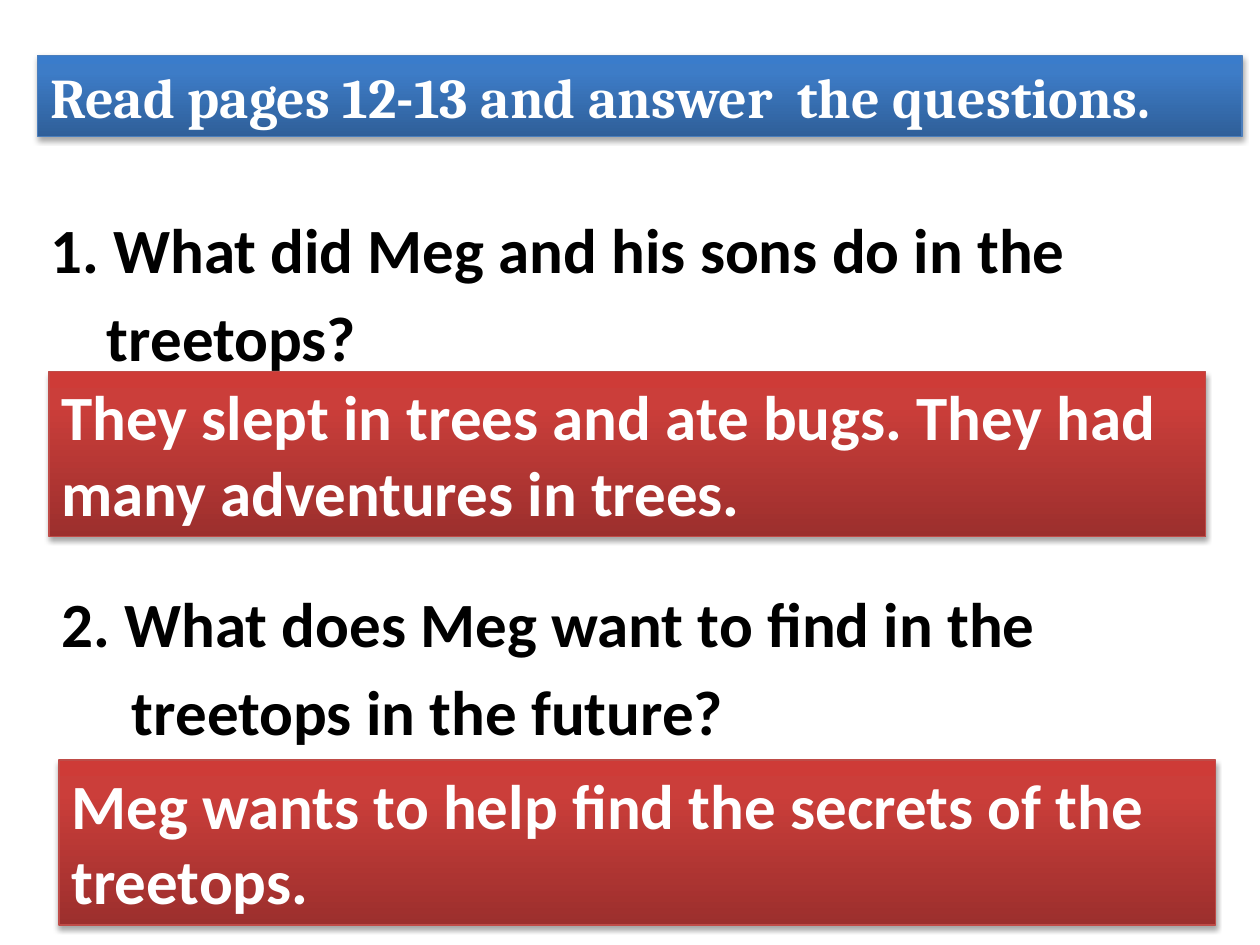
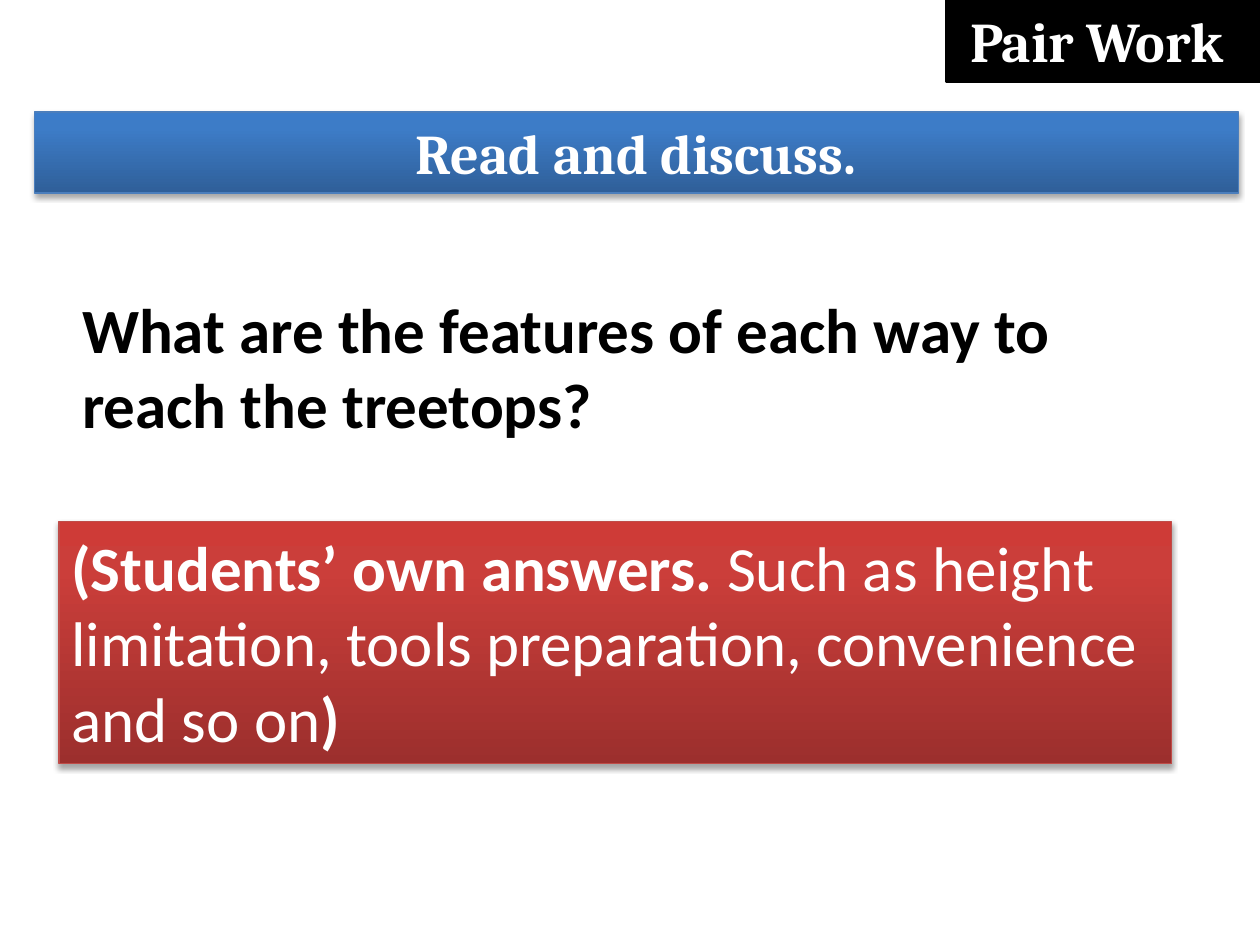
from lxml.etree import SubElement
from pptx import Presentation
from pptx.dml.color import RGBColor
from pptx.enum.shapes import MSO_SHAPE
from pptx.enum.text import MSO_ANCHOR, MSO_AUTO_SIZE, PP_ALIGN
from pptx.oxml.ns import qn
from pptx.util import Cm, Pt

# Shared look: gradient stops run from the bottom edge to the top
BLACK, WHITE = "000000", "FFFFFF"
BLUE = {"stops": [(0, "2F5F99"), (80, "3D7CC7"), (100, "3A7CCB")], "edge": "4B7EBC"}
RED = {"stops": [(0, "9C2F2D"), (80, "CB3E3A"), (100, "CE3B37")], "edge": "BF4C48"}
HEADING = {"font": "Cambria", "size": 32, "color": WHITE}
BAND_WIDTH, BAND_HEIGHT = 24.28, 1.63
ANSWER_WIDTH = 23.32


def rgb(color):
    return RGBColor.from_string(color)


def add(parent, tag, **attributes):
    """Append a child element and return it."""
    return SubElement(parent, qn(tag), {k: str(v) for k, v in attributes.items()})


def place(s, left, top, width, height):
    s.left, s.top, s.width, s.height = Cm(left), Cm(top), Cm(width), Cm(height)


def write(s, *paragraphs, font="Calibri", size=36, color=BLACK, align=PP_ALIGN.LEFT,
          anchor=MSO_ANCHOR.TOP, before=0, indents=()):
    """Each paragraph is a list of (text, bold) runs, or a string set in bold."""
    tf = s.text_frame
    tf.word_wrap = True
    tf.auto_size = MSO_AUTO_SIZE.NONE
    tf.vertical_anchor = anchor
    for i, runs in enumerate(paragraphs):
        p = tf.paragraphs[0] if i == 0 else tf.add_paragraph()
        p.alignment = align
        p.space_before = Pt(before)
        pPr = p._p.get_or_add_pPr()
        pPr.set("marL", str(Cm(indents[i] if indents else 0)))
        pPr.set("indent", "0")
        add(pPr, "a:buNone")
        for text, bold in [(runs, True)] if isinstance(runs, str) else runs:
            r = p.add_run()
            r.text = text
            r.font.name, r.font.size, r.font.bold = font, Pt(size), bold
            r.font.color.rgb = rgb(color)


def style_band(s, theme):
    """Vertical gradient, thin edge and a soft shadow below."""
    spPr = s._element.spPr
    gradient = add(spPr, "a:gradFill", rotWithShape=1)
    stops = add(gradient, "a:gsLst")
    for position, color in theme["stops"]:
        add(add(stops, "a:gs", pos=position * 1000), "a:srgbClr", val=color)
    add(gradient, "a:lin", ang=270 * 60000, scaled=0)
    s.line.color.rgb = rgb(theme["edge"])
    s.line.width = Pt(0.75)
    shadow = add(add(spPr, "a:effectLst"), "a:outerShdw", blurRad=Pt(3.1),
                 dist=Pt(1.8), dir=90 * 60000, rotWithShape=0)
    add(add(shadow, "a:srgbClr", val=BLACK), "a:alpha", val=35000)


def add_heading(slide, text, left, top, align=PP_ALIGN.LEFT):
    s = slide.shapes.title
    place(s, left, top, BAND_WIDTH, BAND_HEIGHT)
    style_band(s, BLUE)
    write(s, text, align=align, anchor=MSO_ANCHOR.MIDDLE, **HEADING)


def add_question(slide, *lines, box, indents=(), in_body=True):
    s = slide.placeholders[1] if in_body else slide.shapes.add_textbox(0, 0, 0, 0)
    place(s, *box)
    write(s, *lines, before=7.2, indents=indents)


def add_box(slide, *box):
    return slide.shapes.add_shape(MSO_SHAPE.RECTANGLE, *map(Cm, box))


def add_answer(slide, runs, left, top, width=ANSWER_WIDTH, height=3.33):
    s = add_box(slide, left, top, width, height)
    style_band(s, RED)
    write(s, runs, color=WHITE)


def add_corner_tag(slide, text):
    s = add_box(slide, 19.08, 0, 6.32, BAND_HEIGHT)
    s.shadow.inherit = False
    s.fill.solid()
    s.fill.fore_color.rgb = rgb(BLACK)
    s.line.color.rgb = rgb(BLACK)
    s.line.width = Pt(2)
    write(s, text, align=PP_ALIGN.CENTER, **HEADING)


def main():
    prs = Presentation()
    prs.slide_width, prs.slide_height = Cm(25.4), Cm(19.05)
    layout = prs.slide_layouts[1]

    # Reading questions with their answers
    slide = prs.slides.add_slide(layout)
    add_heading(slide, "Read pages 12-13 and answer  the questions.", 0.76, 1.12)
    add_question(slide, "1. What did Meg and his sons do in the", "treetops?",
                 box=(0.76, 4.11, 22.86, 3.61), indents=(0, 1.14))
    add_question(slide, "2. What does Meg want to find in the", "treetops in the future?",
                 box=(0.99, 11.66, 21.41, 3.63), indents=(0, 1.42), in_body=False)
    add_answer(slide, "They slept in trees and ate bugs. They had many adventures in trees.",
               0.99, 7.49)
    add_answer(slide, "Meg wants to help find the secrets of the treetops.", 1.19, 15.32)

    # Pair discussion
    slide = prs.slides.add_slide(layout)
    add_heading(slide, "Read and discuss.", 0.69, 2.26, PP_ALIGN.CENTER)
    add_question(slide, "What are the features of each way to reach the treetops?",
                 box=(1.4, 5.72, 22.86, 5.99))
    add_corner_tag(slide, "Pair Work ")
    add_answer(slide, [
        ("(Students’ own answers. ", True),
        ("Such as height limitation, tools preparation, convenience and so on", False),
        (")", True),
    ], 1.19, 10.52, width=22.43, height=4.88)

    prs.save("out.pptx")


if __name__ == "__main__":
    main()
